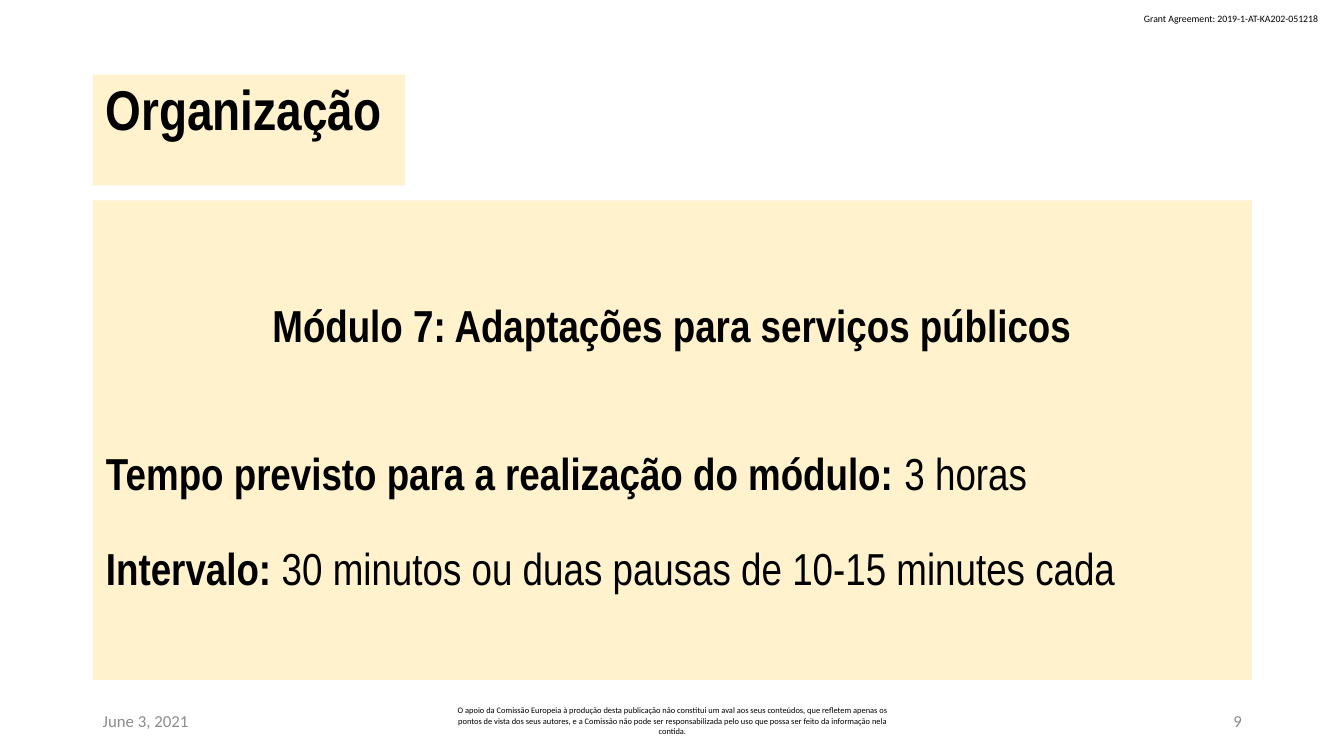
from dataclasses import dataclass

from lxml.etree import SubElement
from pptx import Presentation
from pptx.dml.color import RGBColor
from pptx.enum.text import MSO_ANCHOR, MSO_AUTO_SIZE, PP_ALIGN
from pptx.oxml.ns import qn
from pptx.util import Cm, Pt


@dataclass(frozen=True)
class Theme:
    heading_font: str = "Arial Narrow"
    small_font: str = "Calibri"
    ink: RGBColor = RGBColor(0x00, 0x00, 0x00)
    muted: RGBColor = RGBColor(0x8C, 0x8C, 0x8C)
    panel: RGBColor = RGBColor(0xFF, 0xF2, 0xCC)
    title_size: Pt = Pt(40)
    body_size: Pt = Pt(32)
    footer_size: Pt = Pt(12)
    grant_size: Pt = Pt(7)
    disclaimer_size: Pt = Pt(6)


THEME = Theme()
FOOTER_TOP, FOOTER_HEIGHT = 17.65, 1.02
DISCLAIMER = (
    "O apoio da Comissão Europeia à produção desta publicação não constitui um aval "
    "aos seus conteúdos, que refletem apenas os pontos de vista dos seus autores, e a "
    "Comissão não pode ser responsabilizada pelo uso que possa ser feito da informação "
    "nela contida."
)
BODY_PARAGRAPHS = [
    ([("Módulo 7: Adaptações para serviços públicos", True)],
     {"alignment": PP_ALIGN.CENTER, "line_spacing": 0.9, "space_before": Pt(0)}),
    ([("Tempo previsto para a realização do módulo: ", True), ("3 horas", False)],
     {"alignment": PP_ALIGN.JUSTIFY, "line_spacing": 1.5, "space_before": Pt(48)}),
    ([("Intervalo: ", True), ("30 minutos ou duas pausas de 10-15 minutes cada", False)],
     {"alignment": PP_ALIGN.JUSTIFY, "line_spacing": 1.5, "space_before": Pt(10)}),
]


def apply_format(target, values):
    for name, value in values.items():
        setattr(target, name, value)


def add_run(paragraph, text, font_name, size, color, bold=False):
    run = paragraph.add_run()
    run.text = text
    apply_format(run.font, {"name": font_name, "size": size, "bold": bold})
    run.font.color.rgb = color


def remove_bullet(paragraph):
    properties = paragraph._p.get_or_add_pPr()
    properties.set("marL", "0")
    properties.set("indent", "0")
    SubElement(properties, qn("a:buNone"))


def format_panel(shape, box, margin_top):
    left, top, width, height = map(Cm, box)
    apply_format(shape, {"left": left, "top": top, "width": width, "height": height})
    shape.fill.solid()
    shape.fill.fore_color.rgb = THEME.panel
    apply_format(shape.text_frame, {
        "auto_size": MSO_AUTO_SIZE.NONE,
        "word_wrap": True,
        "vertical_anchor": MSO_ANCHOR.TOP,
        "margin_left": Cm(0.33),
        "margin_right": Cm(0.33),
        "margin_top": Cm(margin_top),
        "margin_bottom": Cm(0.18),
    })


def fill_paragraph(paragraph, runs, values, size):
    apply_format(paragraph, values)
    for text, bold in runs:
        add_run(paragraph, text, THEME.heading_font, size, THEME.ink, bold)


def add_title(slide):
    title = slide.shapes.title
    format_panel(title, (2.34, 1.88, 7.87, 2.79), 0.18)
    fill_paragraph(title.text_frame.paragraphs[0], [("Organização", True)],
                   {"alignment": PP_ALIGN.LEFT, "line_spacing": 0.9}, THEME.title_size)


def add_body(slide):
    body = slide.placeholders[1]
    format_panel(body, (2.34, 5.05, 29.21, 12.09), 2.6)
    frame = body.text_frame
    for index, (runs, values) in enumerate(BODY_PARAGRAPHS):
        paragraph = frame.add_paragraph() if index else frame.paragraphs[0]
        remove_bullet(paragraph)
        fill_paragraph(paragraph, runs, values, THEME.body_size)


def add_small_text(slide, text, box, size, color, alignment, frame_format):
    shape = slide.shapes.add_textbox(*map(Cm, box))
    apply_format(shape.text_frame, frame_format)
    paragraph = shape.text_frame.paragraphs[0]
    paragraph.alignment = alignment
    add_run(paragraph, text, THEME.small_font, size, color)


def add_footer(slide):
    footer_format = {"word_wrap": True, "vertical_anchor": MSO_ANCHOR.MIDDLE}
    items = [
        ("June 3, 2021", 2.34, 7.62, THEME.footer_size, THEME.muted, PP_ALIGN.LEFT),
        (DISCLAIMER, 11.23, 11.43, THEME.disclaimer_size, THEME.ink, PP_ALIGN.CENTER),
        ("9", 23.93, 7.62, THEME.footer_size, THEME.muted, PP_ALIGN.RIGHT),
    ]
    for text, left, width, size, color, alignment in items:
        box = (left, FOOTER_TOP, width, FOOTER_HEIGHT)
        add_small_text(slide, text, box, size, color, alignment, footer_format)


def main():
    presentation = Presentation()
    apply_format(presentation, {"slide_width": Cm(33.87), "slide_height": Cm(19.05)})
    slide = presentation.slides.add_slide(presentation.slide_layouts[1])
    add_small_text(slide, "Grant Agreement: 2019-1-AT-KA202-051218", (28.58, 0.2, 5, 0.56),
                   THEME.grant_size, THEME.ink, PP_ALIGN.LEFT,
                   {"word_wrap": False, "auto_size": MSO_AUTO_SIZE.SHAPE_TO_FIT_TEXT})
    add_footer(slide)
    add_title(slide)
    add_body(slide)
    presentation.save("out.pptx")


if __name__ == "__main__":
    main()
